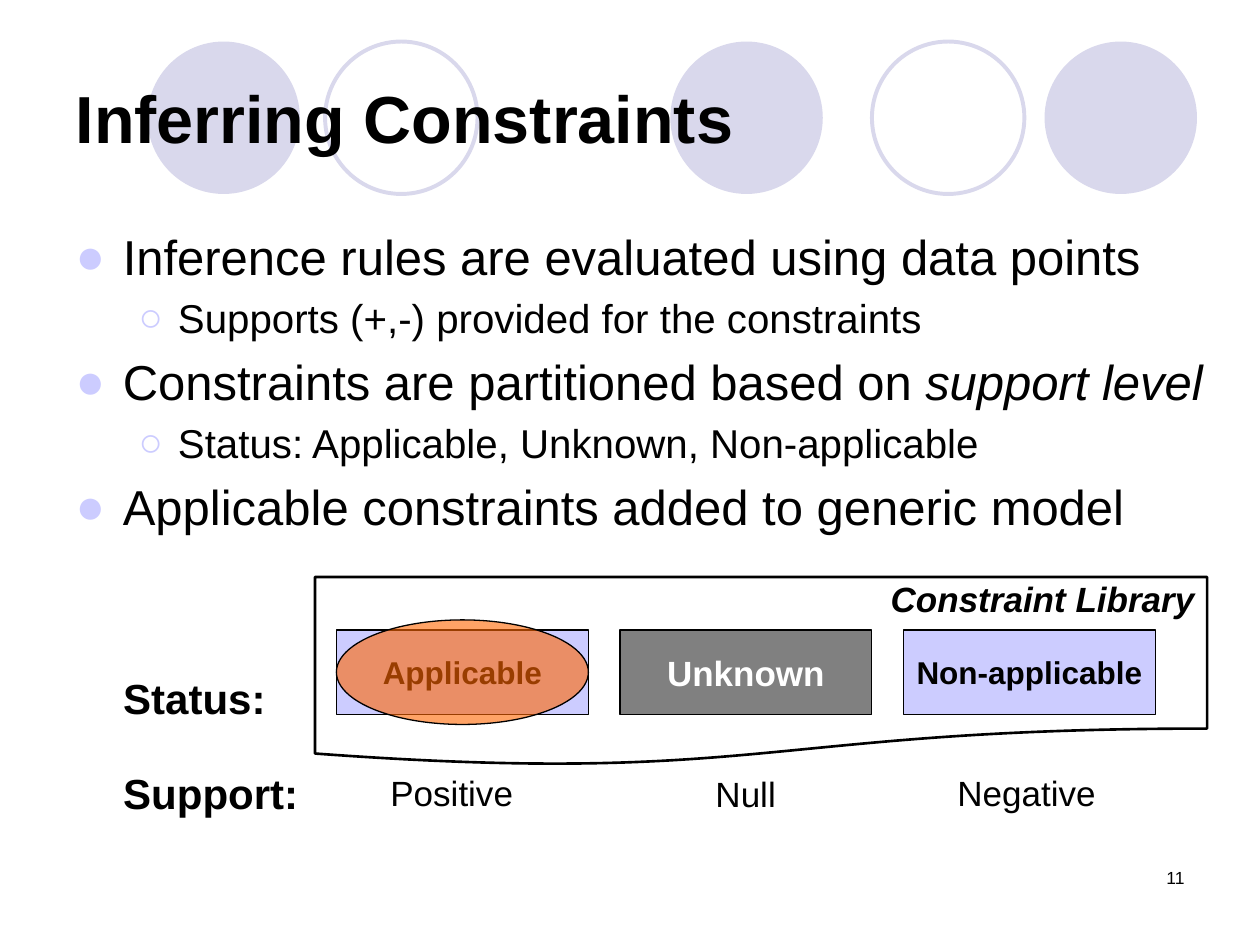
from dataclasses import dataclass
from typing import NamedTuple

from lxml.etree import SubElement
from pptx import Presentation
from pptx.dml.color import RGBColor
from pptx.enum.shapes import MSO_SHAPE
from pptx.enum.text import MSO_ANCHOR, MSO_AUTO_SIZE, PP_ALIGN
from pptx.oxml.ns import qn
from pptx.util import Inches, Pt


@dataclass(frozen=True)
class Theme:
    font: str = "Arial"
    black: str = "000000"
    white: str = "FFFFFF"
    lilac: str = "CCCCFF"
    pale: str = "D9D8EC"
    gray: str = "808080"
    orange: str = "FF6600"
    title: float = 38
    point: float = 28
    detail: float = 23
    label: float = 24
    note: float = 20
    state: float = 18
    page: float = 10


class Box(NamedTuple):
    left: float
    top: float
    width: float
    height: float


class Run(NamedTuple):
    text: str
    size: float
    bold: bool = False
    slant: bool = False
    color: str = "000000"


class Point(NamedTuple):
    level: int
    runs: tuple[Run, ...]


class State(NamedTuple):
    name: Run
    fill: str
    note: str
    spot: Box


THEME = Theme()
MARKS = ("●", "○")
TOP, MID = MSO_ANCHOR.TOP, MSO_ANCHOR.MIDDLE
LEFT, RIGHT, CENTER = PP_ALIGN.LEFT, PP_ALIGN.RIGHT, PP_ALIGN.CENTER

DISCS = (
    (5.32, True),
    (8.29, True),
    (1.17, True),
    (6.92, False),
    (2.58, False),
)
POINTS = (
    Point(0, (Run("Inference rules are evaluated using data points", THEME.point),)),
    Point(1, (Run("Supports (+,-) provided for the constraints", THEME.detail),)),
    Point(0, (
        Run("Constraints are partitioned based on ", THEME.point),
        Run("support level", THEME.point, slant=True),
    )),
    Point(1, (Run("Status: Applicable, Unknown, Non-applicable", THEME.detail),)),
    Point(0, (Run("Applicable constraints added to generic model", THEME.point),)),
)
STATES = (
    State(Run("Applicable", THEME.state, True), THEME.lilac,
          "Positive", Box(3, 6.07, 1.33, 0.43)),
    State(Run("Unknown", THEME.note, True, color=THEME.white), THEME.gray,
          "Null", Box(5.58, 6.08, 0.75, 0.43)),
    State(Run("Non-applicable", THEME.state, True), THEME.lilac,
          "Negative", Box(7.5, 6.07, 1.33, 0.43)),
)


def rgb(code: str) -> RGBColor:
    return RGBColor.from_string(code)


def place(shape, box: Box) -> None:
    shape.left, shape.top, shape.width, shape.height = map(Inches, box)


def add_run(para, item: Run) -> None:
    run = para.add_run()
    run.text = item.text
    font = run.font
    font.name, font.size = THEME.font, Pt(item.size)
    font.bold, font.italic = item.bold, item.slant
    font.color.rgb = rgb(item.color)


def write(shape, item: Run, align=LEFT, anchor=MID, wrap: bool = False) -> None:
    frame = shape.text_frame
    frame.auto_size = MSO_AUTO_SIZE.NONE
    frame.word_wrap, frame.vertical_anchor = wrap, anchor
    para = frame.paragraphs[0]
    para.alignment = align
    add_run(para, item)


def draw(slide, kind, box: Box, fill: str | None = None,
         line: str | None = None, weight: float = 0.75):
    shape = slide.shapes.add_shape(kind, *map(Inches, box))
    shape.shadow.inherit = False
    if fill:
        shape.fill.solid()
        shape.fill.fore_color.rgb = rgb(fill)
    else:
        shape.fill.background()
    if line:
        shape.line.color.rgb = rgb(line)
        shape.line.width = Pt(weight)
    else:
        shape.line.fill.background()
    return shape


def add_text(slide, box: Box, item: Run, **style) -> None:
    write(slide.shapes.add_textbox(*map(Inches, box)), item, **style)


def set_mark(para, mark: str) -> None:
    props = para._p.get_or_add_pPr()
    color = SubElement(props, qn("a:buClr"))
    SubElement(color, qn("a:srgbClr"), val=THEME.lilac)
    SubElement(props, qn("a:buFont"), typeface=THEME.font)
    SubElement(props, qn("a:buChar"), char=mark)


def fill_list(body) -> None:
    place(body, Box(0.5, 1.75, 9.33, 3.17))
    frame = body.text_frame
    frame.auto_size = MSO_AUTO_SIZE.NONE
    for spot, point in enumerate(POINTS):
        para = frame.add_paragraph() if spot else frame.paragraphs[0]
        para.level = point.level
        set_mark(para, MARKS[point.level])
        for item in point.runs:
            add_run(para, item)


def draw_chart(slide) -> None:
    sheet = draw(slide, MSO_SHAPE.FLOWCHART_DOCUMENT, Box(2.5, 4.58, 7.08, 1.5),
                 line=THEME.black, weight=1.5)
    write(sheet, Run("Constraint Library", THEME.note, True, True), RIGHT, TOP)
    sheet.text_frame.margin_top = 0
    for spot, state in enumerate(STATES):
        card = draw(slide, MSO_SHAPE.RECTANGLE, Box(2.67 + 2.25 * spot, 5, 2, 0.67),
                    state.fill, THEME.black)
        write(card, state.name, CENTER)
        add_text(slide, state.spot, Run(state.note, THEME.note), anchor=TOP, wrap=True)
    for top, name in ((5.25, "Status:"), (6, "Support:")):
        add_text(slide, Box(0.88, top, 1.5, 0.58), Run(name, THEME.label, True))
    halo = draw(slide, MSO_SHAPE.OVAL, Box(2.67, 4.92, 2, 0.83),
                THEME.orange, THEME.black)
    tint = halo._element.spPr.find(qn("a:solidFill")).find(qn("a:srgbClr"))
    SubElement(tint, qn("a:alpha"), val="60000")


def main() -> None:
    deck = Presentation()
    deck.slide_width, deck.slide_height = Inches(10), Inches(7.5)
    slide = deck.slides.add_slide(deck.slide_layouts[1])
    title, body = slide.placeholders
    for left, solid in DISCS:
        draw(slide, MSO_SHAPE.OVAL, Box(left, 0.33, 1.21, 1.21),
             THEME.pale if solid else None, None if solid else THEME.pale, 2.25)
    add_text(slide, Box(7.17, 6.83, 2.33, 0.5), Run("11", THEME.page),
             align=RIGHT, anchor=TOP, wrap=True)
    for holder in (title, body):
        slide.shapes._spTree.append(holder._element)
    place(title, Box(0.5, 0.3, 9, 1.25))
    write(title, Run("Inferring Constraints", THEME.title, True), wrap=True)
    fill_list(body)
    draw_chart(slide)
    deck.save("out.pptx")


if __name__ == "__main__":
    main()
